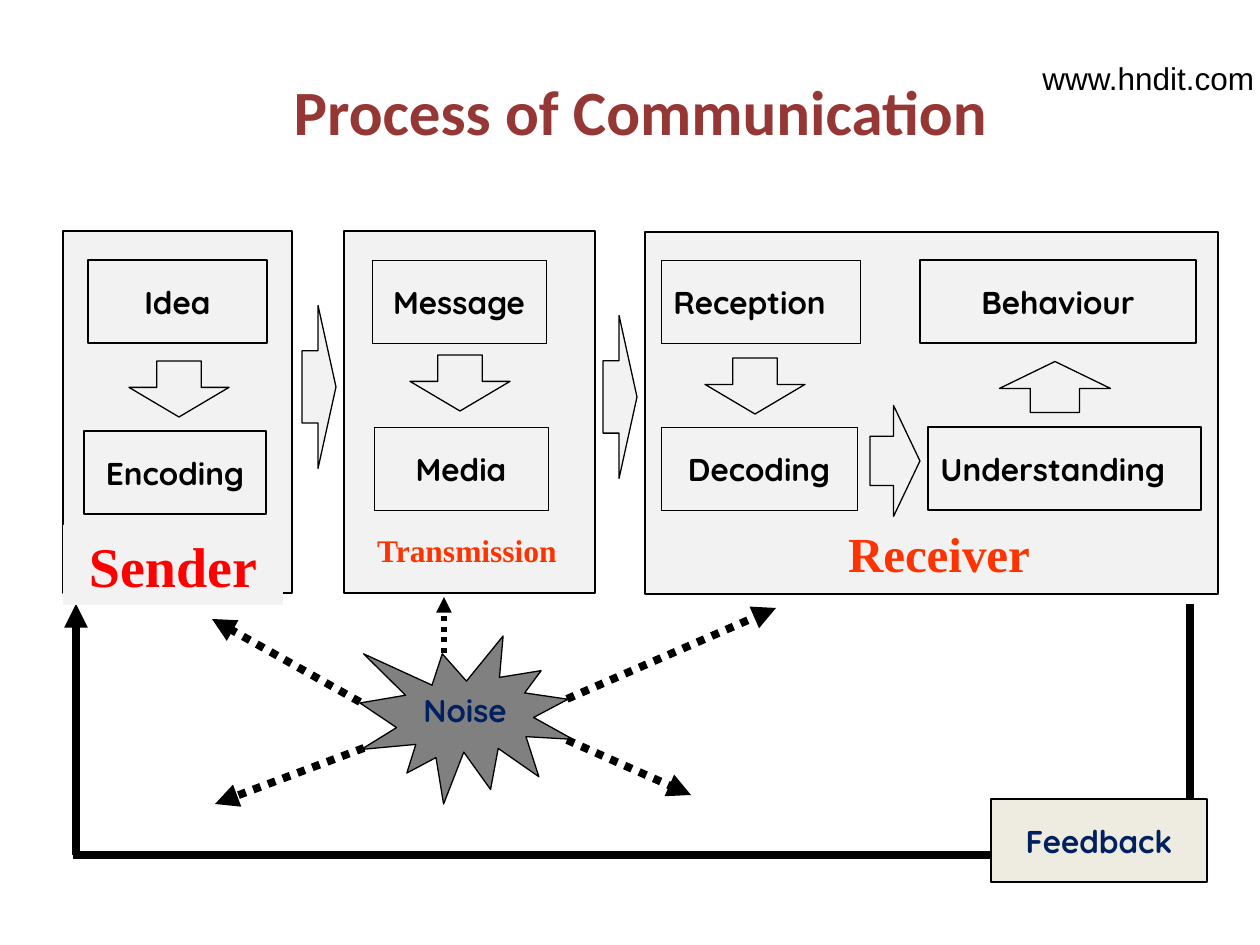
from lxml.etree import SubElement
from pptx import Presentation
from pptx.dml.color import RGBColor
from pptx.enum.dml import MSO_LINE as Dash
from pptx.enum.shapes import MSO_CONNECTOR as Link, MSO_SHAPE as Kind
from pptx.enum.text import MSO_ANCHOR as Anchor, PP_ALIGN as Align
from pptx.oxml.ns import qn
from pptx.util import Emu, Inches, Pt

HUES = {"panel": "F2F2F2", "seal": "808080", "note": "EEECE1", "ink": "000000",
        "navy": "002060", "title": "953735", "red": "FF0000", "orange": "FF3300"}

TITLE = ("Process of Communication", (105, 32, 1071, 157))
SITE = ("www.hndit.com", (1030, 53, 305, 63))
NOISE = ("Noise", (360, 636, 213, 168))
FEEDBACK = ("Feedback", (991, 799, 216, 83))

RAYS = [((567, 699), (776, 608), 4.5), ((360, 702), (212, 619), 4.5),
        ((444, 653), (444, 597), 3), ((567, 740), (691, 795), 4.5),
        ((364, 748), (215, 804), 4.5)]
LOOP = [((1190, 604), (1190, 799), False), ((991, 855), (73, 855), False),
        ((76, 855), (76, 604), True)]

STAGES = [
    {"frame": (63, 231, 229, 362),
     "label": ("Sender", (63, 525, 220, 80), 32, "red"),
     "boxes": [("Idea", (88, 260, 179, 83), 0.75, Align.CENTER),
               ("Encoding", (84, 431, 182, 83), 0.75, Align.CENTER)],
     "arrows": [(179, 389, 56, 100, 90)]},
    {"frame": (344, 231, 251, 362),
     "label": ("Transmission", (357, 525, 220, 50), 18, "orange"),
     "boxes": [("Message", (372, 260, 174, 83), 0.25, Align.CENTER),
               ("Media", (374, 427, 174, 83), 0.25, Align.CENTER)],
     "arrows": [(319, 387, 34, 163, 0), (460, 383, 56, 100, 90)]},
    {"frame": (645, 232, 573, 362),
     "label": ("Receiver", (829, 517, 220, 72), 28, "orange"),
     "boxes": [("Reception", (661, 260, 199, 83), 0.25, Align.LEFT),
               ("Decoding", (661, 427, 196, 83), 0.25, Align.CENTER),
               ("Behaviour", (920, 260, 276, 83), 0.75, Align.CENTER),
               ("Understanding", (928, 427, 273, 83), 0.75, Align.LEFT)],
     "arrows": [(620, 397, 34, 163, 0), (755, 386, 56, 100, 90),
                (895, 461, 50, 111, 0), (1055, 387, 51, 111, 270)]},
]


def px(n):
    return Emu(round(n * 914400 / 126))


def hue(name):
    return RGBColor.from_string(HUES[name])


def write(shape, text, size, face, tint, bold=True, align=Align.CENTER,
          anchor=Anchor.MIDDLE, wrap=True):
    frame = shape.text_frame
    frame.word_wrap, frame.vertical_anchor = wrap, anchor
    para = frame.paragraphs[0]
    para.alignment = align
    run = para.add_run()
    run.text = text
    look = {"size": Pt(size), "name": face, "bold": bold}
    for key, val in look.items():
        setattr(run.font, key, val)
    run.font.color.rgb = hue(tint)
    return frame


def shape(kind, rect, fill="panel", width=0.75):
    item = slide.shapes.add_shape(kind, *map(px, rect))
    item.shadow.inherit = False
    item.fill.solid()
    item.fill.fore_color.rgb = hue(fill)
    if width:
        item.line.color.rgb = hue("ink")
        item.line.width = Pt(width)
    else:
        item.line.fill.background()
    return item


def line(start, end, width, dots=False, tip=True):
    item = slide.shapes.add_connector(Link.STRAIGHT, *map(px, start + end))
    item.line.color.rgb = hue("ink")
    item.line.width = Pt(width)
    if dots:
        item.line.dash_style = Dash.ROUND_DOT
    if tip:
        SubElement(item.line._get_or_add_ln(), qn("a:tailEnd"), type="triangle")
    SubElement(item._element.spPr, qn("a:effectLst"))


def arrow(x, y, w, h, turn):
    item = shape(Kind.RIGHT_ARROW, (x - w / 2, y - h / 2, w, h))
    item.adjustments[0], item.adjustments[1] = 0.444, 0.528
    item.rotation = turn


deck = Presentation()
deck.slide_width, deck.slide_height = Inches(10), Inches(7.5)
slide = deck.slides.add_slide(deck.slide_layouts[5])

text, rect = TITLE
title = slide.shapes.title
title.left, title.top, title.width, title.height = map(px, rect)
write(title, text, 36, "Calibri", "title")

text, rect = NOISE
seal = shape(Kind.EXPLOSION1, rect, "seal")
frame = write(seal, text, 18, "Quicksand", "navy", anchor=Anchor.TOP)
frame.margin_left = frame.margin_right = 0
for start, end, width in RAYS:
    line(start, end, width, dots=True)

text, rect = FEEDBACK
write(shape(Kind.RECTANGLE, rect, "note"), text, 18, "Quicksand", "navy")
for start, end, tip in LOOP:
    line(start, end, 4.5, tip=tip)

for stage in STAGES:
    shape(Kind.RECTANGLE, stage["frame"])
    for text, rect, width, align in stage["boxes"]:
        box = shape(Kind.RECTANGLE, rect, width=width)
        write(box, text, 18, "Quicksand", "ink", align=align)
    for spot in stage["arrows"]:
        arrow(*spot)
    text, rect, size, tint = stage["label"]
    label = shape(Kind.RECTANGLE, rect, width=0)
    write(label, text, size, "Times New Roman", tint)

text, rect = SITE
site = slide.shapes.add_textbox(*map(px, rect))
write(site, text, 18, "Arial", "ink", bold=False, align=Align.LEFT,
      anchor=Anchor.TOP)

deck.save("out.pptx")
